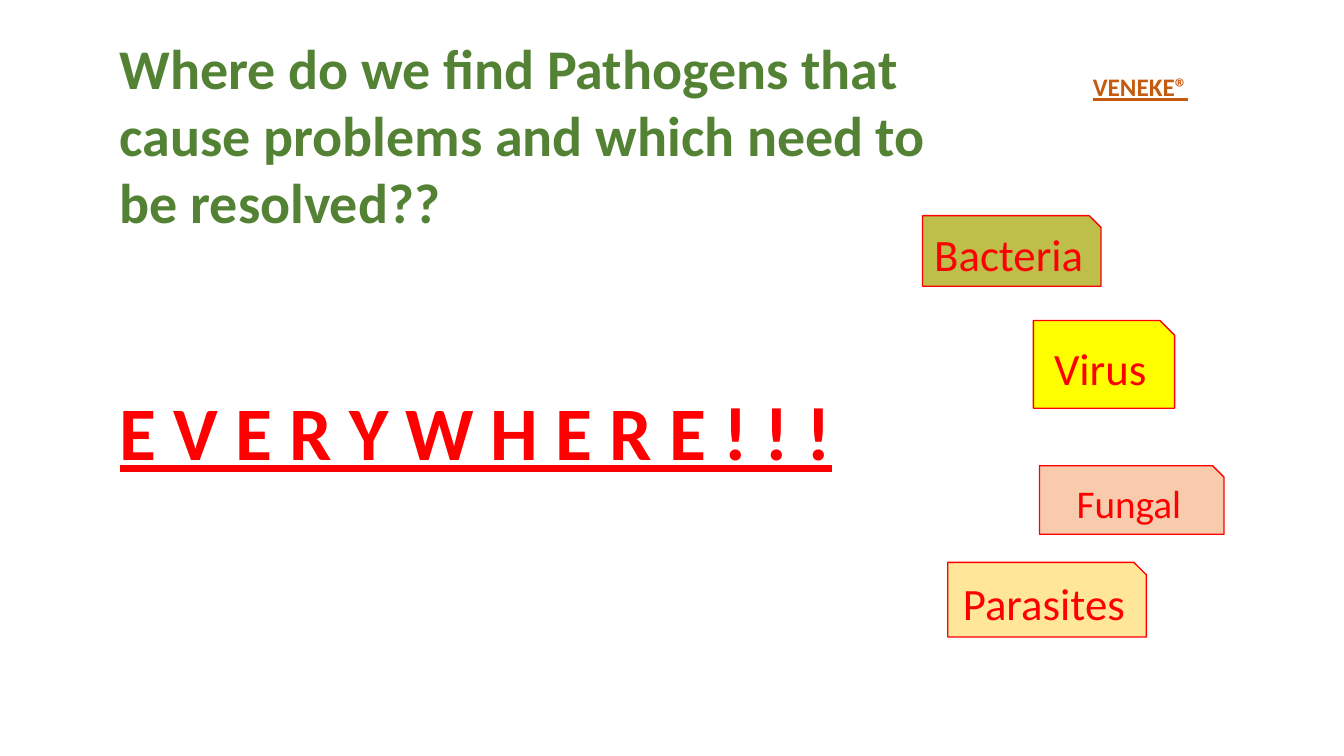
from pptx import Presentation
from pptx import util as u
from pptx.dml.color import RGBColor
from pptx.enum import shapes, text

COLORS = {
    "red": "FF0000",
    "green": "548235",
    "orange": "C55A11",
    "olive": "BEBE4A",
    "yellow": "FFFF00",
    "peach": "F8CBAD",
    "cream": "FFE699",
}


def color(name):
    return RGBColor.from_string(COLORS[name])


def style(paragraph, size, color_name, bold=False, underline=False):
    font = paragraph.font
    font.name = "Calibri"
    font.size = u.Pt(size)
    font.color.rgb = color(color_name)
    font.bold = bold
    font.underline = underline


presentation = Presentation()
presentation.slide_width = u.Inches(13.33)
presentation.slide_height = u.Inches(7.5)
slide = presentation.slides.add_slide(presentation.slide_layouts[6])

pathogens = [
    ("Bacteria", 9.15, 2.14, 1.77, 0.7, "olive", 32),
    ("Fungal", 10.31, 4.62, 1.83, 0.68, "peach", 28),
    ("Parasites", 9.4, 5.58, 1.97, 0.74, "cream", 32),
    ("Virus", 10.25, 3.18, 1.4, 0.87, "yellow", 32),
]
for name, left, top, width, height, fill, size in pathogens:
    shape = slide.shapes.add_shape(
        shapes.MSO_SHAPE.SNIP_1_RECTANGLE,
        u.Inches(left), u.Inches(top), u.Inches(width), u.Inches(height))
    shape.shadow.inherit = False
    shape.fill.solid()
    shape.fill.fore_color.rgb = color(fill)
    shape.line.color.rgb = color("red")
    shape.line.width = u.Pt(1)
    frame = shape.text_frame
    frame.vertical_anchor = text.MSO_ANCHOR.MIDDLE
    paragraph = frame.paragraphs[0]
    paragraph.text = name
    paragraph.alignment = text.PP_ALIGN.CENTER
    style(paragraph, size, "red")

question = ("Where do we find Pathogens that\n"
            "cause problems and which need to be resolved??")
text_boxes = [
    (question, 1.09, 0.28, 8.78, 2.12, 40, "green", False),
    ("VENEKE®", 10.74, 0.66, 1.17, 0.4, 18, "orange", True),
    ("E V E R Y W H E R E ! ! !", 1.09, 3.77, 7.4, 1.01, 54, "red", True),
]
for words, left, top, width, height, size, color_name, underline in text_boxes:
    box = slide.shapes.add_textbox(
        u.Inches(left), u.Inches(top), u.Inches(width), u.Inches(height))
    frame = box.text_frame
    frame.word_wrap = True
    frame.auto_size = text.MSO_AUTO_SIZE.SHAPE_TO_FIT_TEXT
    frame.text = words
    for paragraph in frame.paragraphs:
        style(paragraph, size, color_name, True, underline)

presentation.save("out.pptx")
